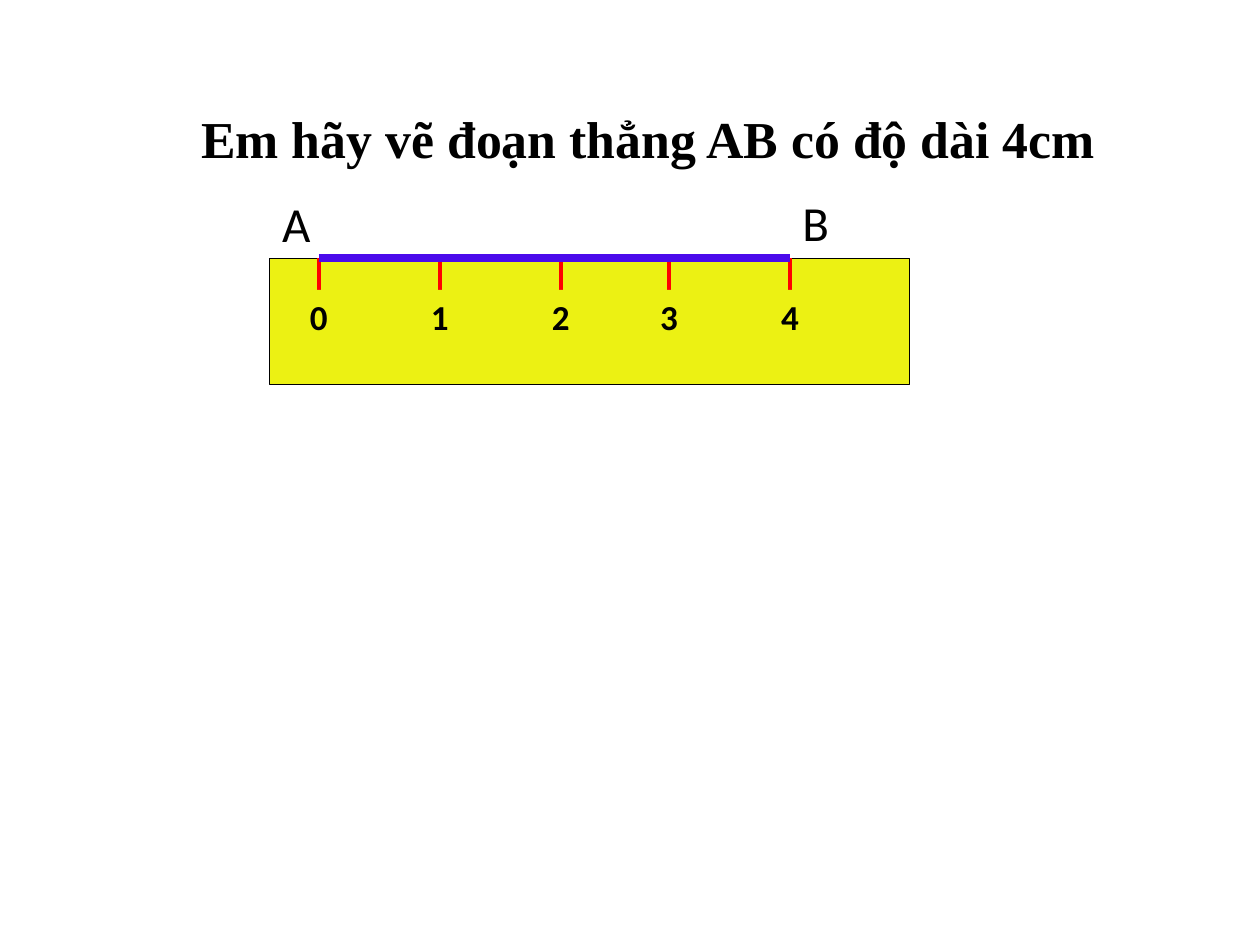
from dataclasses import dataclass
from pptx import Presentation
from pptx.dml.color import RGBColor
from pptx.enum.shapes import MSO_CONNECTOR, MSO_SHAPE
from pptx.enum.text import MSO_ANCHOR, PP_ALIGN
from pptx.oxml.ns import qn
from pptx.util import Inches, Pt
from lxml.etree import SubElement


@dataclass(frozen=True)
class Theme:
    ink: RGBColor = RGBColor(0, 0, 0)
    ruler: RGBColor = RGBColor.from_string("ECF113")
    tick: RGBColor = RGBColor.from_string("FF0000")
    segment: RGBColor = RGBColor.from_string("4B0BEB")
    serif: str = "Times New Roman"
    sans: str = "Calibri"
    title: float = 29.6
    point: float = 28
    number: float = 20


THEME = Theme()


def add_run(frame, text, size, face, bold=False):
    frame.word_wrap = True
    run = frame.paragraphs[0].add_run()
    run.text = text
    font = run.font
    font.name, font.size, font.bold = face, Pt(size), bold
    font.color.rgb = THEME.ink


def add_text(slide, box, text, size, face, bold=False):
    frame = slide.shapes.add_textbox(*map(Inches, box)).text_frame
    add_run(frame, text, size, face, bold)
    return frame


def add_line(shapes, start, end, color, width):
    line = shapes.add_connector(
        MSO_CONNECTOR.STRAIGHT, *map(Inches, (*start, *end)))
    line.line.color.rgb = color
    line.line.width = Pt(width)
    SubElement(line._element.spPr, qn("a:effectLst"))


def add_block(shapes, box):
    block = shapes.add_shape(MSO_SHAPE.RECTANGLE, *map(Inches, box))
    block.shadow.inherit = False
    block.fill.solid()
    block.fill.fore_color.rgb = THEME.ruler
    block.line.fill.background()
    return block


def add_number(shapes, box, text):
    frame = add_block(shapes, box).text_frame
    frame.vertical_anchor = MSO_ANCHOR.MIDDLE
    frame.margin_left = frame.margin_right = 0
    add_run(frame, text, THEME.number, THEME.sans, True)
    frame.paragraphs[0].alignment = PP_ALIGN.CENTER


def add_title(slide, box):
    frame = add_text(slide, box, "Em hãy vẽ đoạn thẳng AB có độ dài 4cm",
                     THEME.title, THEME.serif, True)
    frame.margin_top = Inches(0.12)


def add_ruler(slide, box):
    left, top, width, height = box
    marks = [left + gap for gap in (0.39, 1.35, 2.31, 3.17, 4.13)]
    drop, side, tall = 0.25, 0.38, 0.42
    shapes = slide.shapes.add_group_shape().shapes
    body = add_block(shapes, box)
    body.line.color.rgb = THEME.ink
    body.line.width = Pt(0.75)
    for value, mark in enumerate(marks):
        add_line(shapes, (mark, top), (mark, top + drop), THEME.tick, 2.25)
        add_number(shapes, (mark - side / 2, top + drop, side, tall), str(value))
    add_line(shapes, (marks[0], top), (marks[-1], top), THEME.segment, 4.5)
    for name, spot, lift in (("A", left, 0.56), ("B", marks[-1], 0.57)):
        add_text(slide, (spot, top - lift, 0.92, 0.57), name,
                 THEME.point, THEME.sans)


def main():
    deck = Presentation()
    deck.slide_width, deck.slide_height = Inches(10), Inches(7.5)
    slide = deck.slides.add_slide(deck.slide_layouts[6])
    add_title(slide, (1.5, 0.73, 7.75, 1))
    add_ruler(slide, (2.14, 2.05, 5.08, 1))
    deck.save("out.pptx")


if __name__ == "__main__":
    main()
